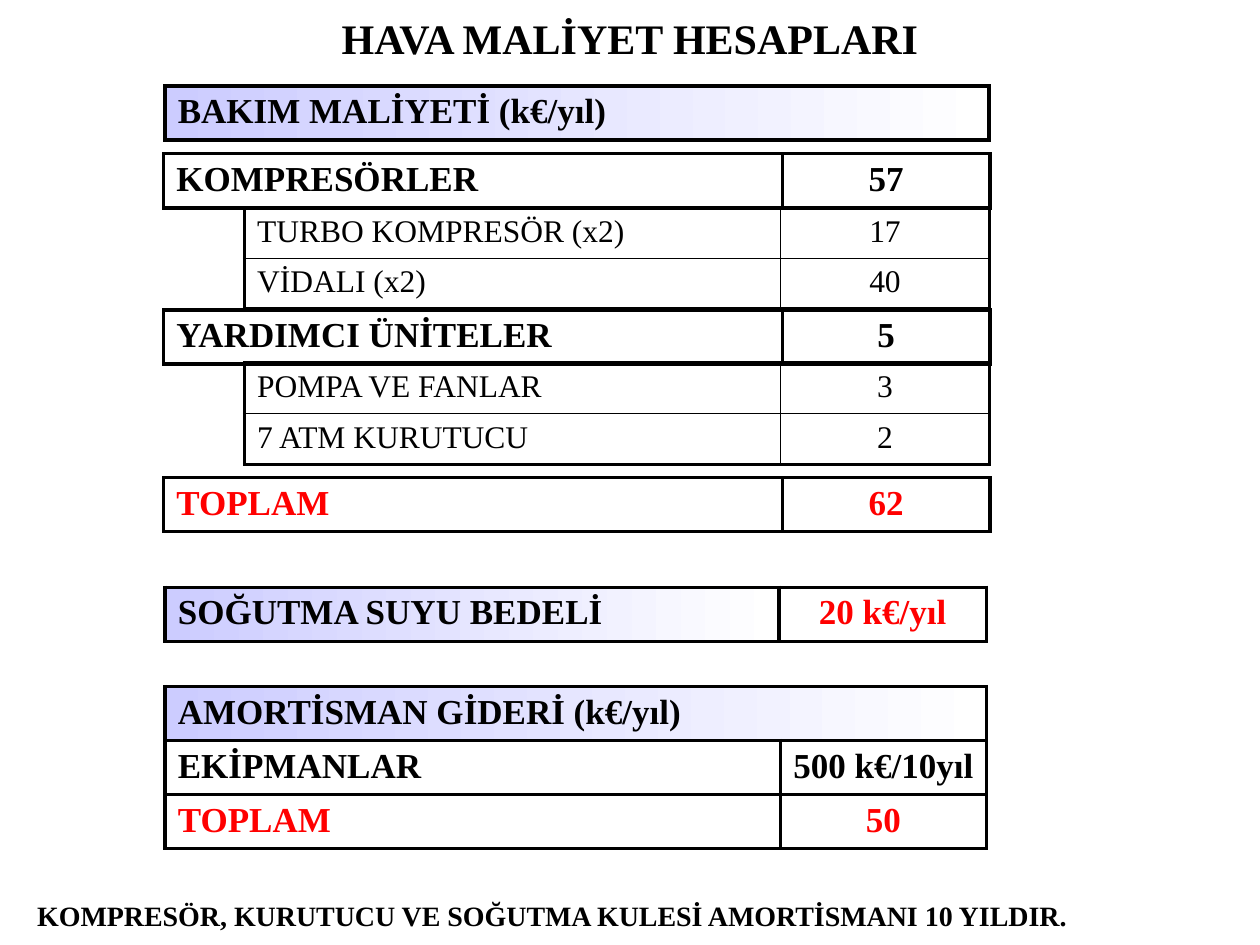
from lxml.etree import SubElement
from pptx import Presentation
from pptx.dml.color import RGBColor
from pptx.enum.text import MSO_ANCHOR, PP_ALIGN
from pptx.oxml.ns import qn
from pptx.util import Cm, Pt

COLORS = {"black": "000000", "red": "FF0000", "lilac": "CCCCFF", "white": "FFFFFF"}
FONT = "Times New Roman"
THICK, THIN = 2.25, 1


def rgb(name):
    return RGBColor.from_string(COLORS[name])


class CostSlide:
    """Hold the style and the current slide, and add its elements."""

    def __init__(self, prs):
        self.slide = prs.slides.add_slide(prs.slide_layouts[5])

    def format(self, tf, size, color="black", bold=True, align=PP_ALIGN.LEFT):
        for p in tf.paragraphs:
            p.alignment = align
            for r in p.runs:
                r.font.name = FONT
                r.font.size = Pt(size)
                r.font.bold = bold
                r.font.color.rgb = rgb(color)

    def place(self, sp, left, top, width, height):
        sp.left, sp.top, sp.width, sp.height = Cm(left), Cm(top), Cm(width), Cm(height)

    def title(self, text, box):
        sp = self.slide.shapes.title
        self.place(sp, *box)
        sp.text_frame.text = text
        sp.text_frame.vertical_anchor = MSO_ANCHOR.MIDDLE
        self.format(sp.text_frame, 24, align=PP_ALIGN.CENTER)

    def note(self, text, box):
        sp = self.slide.shapes.add_textbox(*(Cm(v) for v in box))
        sp.text_frame.word_wrap = True
        sp.text_frame.text = text
        self.format(sp.text_frame, 16)

    def borders(self, cell, widths):
        tcPr = cell._tc.get_or_add_tcPr()
        for side, width in zip("LRTB", widths):
            ln = SubElement(tcPr, qn(f"a:ln{side}"), w=str(Pt(width)))
            fill = SubElement(ln, qn("a:solidFill"))
            SubElement(fill, qn("a:srgbClr"), val=COLORS["black"])

    def gradient(self, cell):
        cell.fill.gradient()
        cell.fill.gradient_angle = 0
        for stop, name in zip(cell.fill.gradient_stops, ("lilac", "white")):
            stop.color.rgb = rgb(name)

    def table(self, left, top, widths, rows, size=20, height=1.09, bold=True,
              colors=("black", "black"), inner=THICK, shaded=False):
        n, m = len(rows), len(widths)
        frame = self.slide.shapes.add_table(
            n, m, Cm(left), Cm(top), Cm(sum(widths)), Cm(height * n))
        table = frame.table
        table.first_row = table.horz_banding = False
        for col, width in zip(table.columns, widths):
            col.width = Cm(width)
        for i, row in enumerate(rows):
            table.rows[i].height = Cm(height)
            for j, text in enumerate(row):
                cell = table.cell(i, j)
                edges = (j == 0, j == m - 1, i == 0, i == n - 1)
                self.borders(cell, [THICK if edge else inner for edge in edges])
                if shaded and j == 0:
                    self.gradient(cell)
                else:
                    cell.fill.background()
                cell.text_frame.text = text
                align = PP_ALIGN.CENTER if j else PP_ALIGN.LEFT
                self.format(cell.text_frame, size, colors[j], bold, align)

    def details(self, top, rows):
        self.table(4.93, top, (10.8, 4.22), rows, size=18, height=1.02,
                   bold=False, inner=THIN)


def main():
    prs = Presentation()
    prs.slide_width, prs.slide_height = Cm(25.4), Cm(19.05)
    s = CostSlide(prs)
    red = ("red", "red")
    group = (12.47, 4.19)
    depreciation = (12.4, 4.16)

    s.title("HAVA MALİYET HESAPLARI", (3.7, 0.13, 18, 1.27))
    s.table(3.33, 1.73, (16.61,), [["BAKIM MALİYETİ (k€/yıl)"]], shaded=True)
    s.table(3.3, 3.1, group, [["KOMPRESÖRLER", "57"]])
    s.details(4.19, [["TURBO KOMPRESÖR (x2)", "17"], ["VİDALI (x2)", "40"]])
    s.table(3.3, 6.25, group, [["YARDIMCI ÜNİTELER", "5"]])
    s.details(7.32, [["POMPA VE FANLAR", "3"], ["7 ATM KURUTUCU", "2"]])
    s.table(3.3, 9.63, group, [["TOPLAM", "62"]], colors=red)

    s.table(3.33, 11.84, (12.37, 4.19), [["SOĞUTMA SUYU BEDELİ", "20 k€/yıl"]],
            colors=("black", "red"), shaded=True)

    s.table(3.33, 13.84, (16.56,), [["AMORTİSMAN GİDERİ (k€/yıl)"]], shaded=True)
    s.table(3.33, 14.93, depreciation, [["EKİPMANLAR", "500 k€/10yıl"]])
    s.table(3.33, 16.02, depreciation, [["TOPLAM", "50"]], colors=red)

    s.note("KOMPRESÖR, KURUTUCU VE SOĞUTMA KULESİ AMORTİSMANI 10 YILDIR.",
           (0.5, 17.98, 23, 0.94))
    prs.save("out.pptx")


if __name__ == "__main__":
    main()
